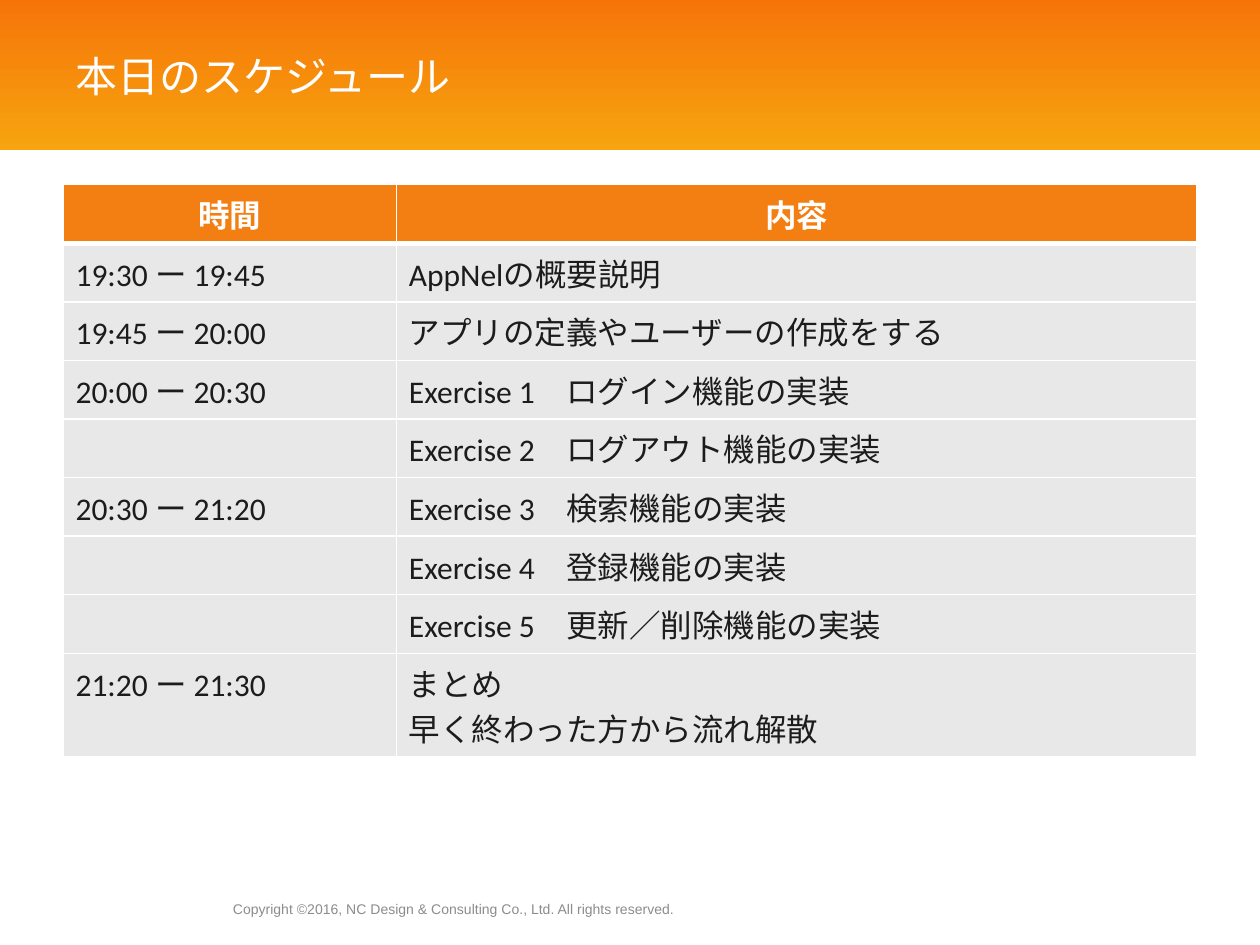
from lxml.etree import SubElement
from pptx import Presentation
from pptx.dml.color import RGBColor
from pptx.enum.shapes import MSO_SHAPE as Shape
from pptx.enum.text import MSO_ANCHOR as Anchor, PP_ALIGN as Align
from pptx.oxml.ns import qn
from pptx.util import Pt

WHITE = RGBColor(0xFF, 0xFF, 0xFF)
INK = RGBColor(0x1C, 0x1C, 0x1C)
GRAY = RGBColor(0x8C, 0x8C, 0x8C)
ROW_GRAY = RGBColor(0xE8, 0xE8, 0xE8)
ORANGE = RGBColor(0xF3, 0x7F, 0x12)
BAND_TOP = RGBColor(0xF6, 0x75, 0x09)
BAND_BOTTOM = RGBColor(0xF6, 0xA4, 0x0F)

CJK_FONT = "Noto Sans CJK JP"
HEADINGS = ("時間", "内容")
SCHEDULE = [
    ("19:30 ー 19:45", "AppNelの概要説明"),
    ("19:45 ー 20:00", "アプリの定義やユーザーの作成をする"),
    ("20:00 ー 20:30", "Exercise 1　ログイン機能の実装"),
    ("", "Exercise 2　ログアウト機能の実装"),
    ("20:30 ー 21:20", "Exercise 3　検索機能の実装"),
    ("", "Exercise 4　登録機能の実装"),
    ("", "Exercise 5　更新／削除機能の実装"),
    ("21:20 ー 21:30", "まとめ\n早く終わった方から流れ解散"),
]


def write(frame, text, size=18, font="Calibri", color=INK, bold=False, align=Align.LEFT):
    for index, line in enumerate(text.split("\n")):
        para = frame.add_paragraph() if index else frame.paragraphs[0]
        para.alignment = align
        para.font.size = Pt(size)
        if not line:
            continue
        span = para.add_run()
        span.text = line
        span.font.size = Pt(size)
        span.font.bold = bold
        span.font.color.rgb = color
        span.font.name = font
        SubElement(span.font._element, qn("a:ea")).set("typeface", CJK_FONT)


class SlideBuilder:
    def __init__(self, page):
        self.page = page

    def band(self, width, height):
        band = self.page.shapes.add_shape(Shape.RECTANGLE, 0, 0, Pt(width), Pt(height))
        band.shadow.inherit = False
        band.line.fill.background()
        band.fill.gradient()
        band.fill.gradient_angle = 90
        for stop, color in zip(band.fill.gradient_stops, (BAND_BOTTOM, BAND_TOP)):
            stop.color.rgb = color

    def title(self, text, left, top, width, height):
        title = self.page.shapes.title
        title.left, title.top, title.width, title.height = map(Pt, (left, top, width, height))
        title.text_frame.vertical_anchor = Anchor.MIDDLE
        write(title.text_frame, text, size=24, font=CJK_FONT, color=WHITE)
        title.element.getparent().append(title.element)

    def footer(self, text, left, top, width, height):
        box = self.page.shapes.add_textbox(*map(Pt, (left, top, width, height)))
        box.text_frame.word_wrap = True
        box.text_frame.vertical_anchor = Anchor.MIDDLE
        write(box.text_frame, text, size=8, font="Arial", color=GRAY)

    def rule_below(self, cell, weight):
        properties = cell._tc.get_or_add_tcPr()
        line = SubElement(properties, qn("a:lnB"), w=str(Pt(weight)))
        fill = SubElement(line, qn("a:solidFill"))
        SubElement(fill, qn("a:srgbClr"), val=str(WHITE))

    def table(self, rows, left, top, widths, row_height, extra_line):
        heights = [row_height + extra_line * max(text.count("\n") for text in row)
                   for row in rows]
        frame = self.page.shapes.add_table(
            len(rows), len(widths), Pt(left), Pt(top), Pt(sum(widths)), Pt(sum(heights)))
        table = frame.table
        table.horz_banding = False
        for column, width in zip(table.columns, widths):
            column.width = Pt(width)
        for row_index, row in enumerate(rows):
            table.rows[row_index].height = Pt(heights[row_index])
            is_header = row_index == 0
            for column_index, text in enumerate(row):
                cell = table.cell(row_index, column_index)
                if is_header:
                    self.rule_below(cell, 3)
                cell.fill.solid()
                cell.fill.fore_color.rgb = ORANGE if is_header else ROW_GRAY
                write(cell.text_frame, text, bold=is_header,
                      color=WHITE if is_header else INK,
                      align=Align.CENTER if is_header else Align.LEFT)


def main():
    deck = Presentation()
    deck.slide_width, deck.slide_height = Pt(720), Pt(540)
    builder = SlideBuilder(deck.slides.add_slide(deck.slide_layouts[5]))
    builder.band(720, 86)
    builder.footer("Copyright ©2016, NC Design & Consulting Co., Ltd. All rights reserved.",
                   126, 509.5, 306, 20)
    builder.table([HEADINGS] + SCHEDULE, 36, 105.5, (190.5, 457.5), 33.5, 25.5)
    builder.title("本日のスケジュール", 36, 18, 649.5, 50.5)
    deck.save("out.pptx")


if __name__ == "__main__":
    main()
